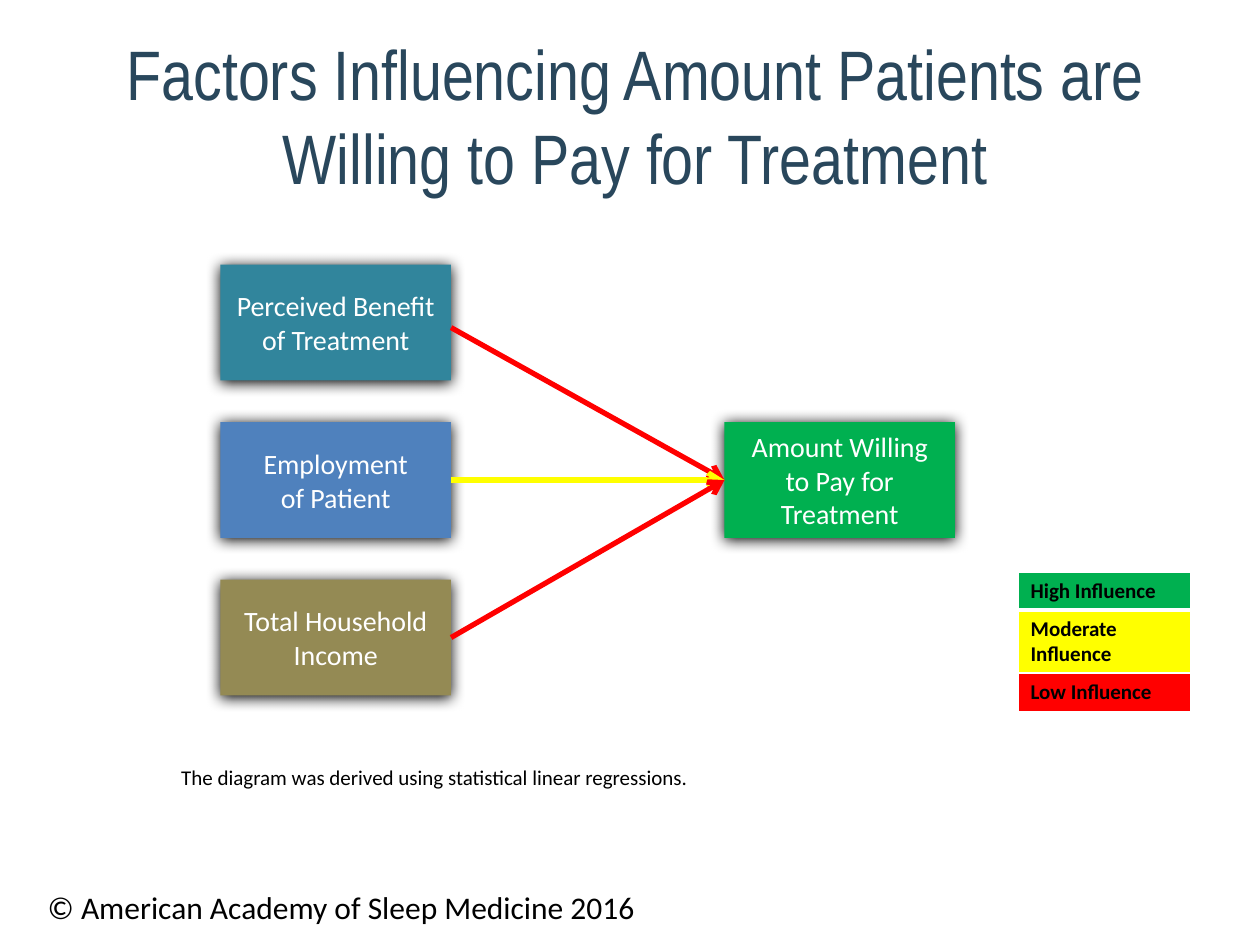
from lxml.etree import SubElement
from pptx import Presentation
from pptx.dml.color import RGBColor
from pptx.enum.shapes import MSO_CONNECTOR, MSO_SHAPE
from pptx.enum.text import MSO_ANCHOR, PP_ALIGN
from pptx.oxml.ns import qn
from pptx.util import Inches, Pt

HIGH, MODERATE, LOW = "00B050", "FFFF00", "FF0000"
BOX_W, BOX_H = 1.83, 0.92
FACTOR_X, OUTCOME_X = 1.75, 5.75
TOP, PITCH = 2.1, 1.25
FACTORS = [
    ("Perceived Benefit of Treatment", "31859C", LOW, 2.6),
    ("Employment\nof Patient", "4F81BD", MODERATE, 3.81),
    ("Total Household Income", "948A54", LOW, 5.06),
]
LEGEND = [
    ("High Influence", HIGH, 0.3),
    ("Moderate Influence", MODERATE, 0.49),
    ("Low Influence", LOW, 0.31),
]


def rgb(color):
    return RGBColor.from_string(color)


def write(tf, text, size, color="000000", align=PP_ALIGN.LEFT, name="Calibri", bold=False):
    tf.text = text
    for p in tf.paragraphs:
        p.alignment = align
        p.font.color.rgb = rgb(color)
        for key, value in {"size": Pt(size), "name": name, "bold": bold}.items():
            setattr(p.font, key, value)


def add_text(s, text, box, size, wrap=True, anchor=MSO_ANCHOR.TOP, **fmt):
    tf = s.shapes.add_textbox(*map(Inches, box)).text_frame
    tf.word_wrap = wrap
    tf.vertical_anchor = anchor
    write(tf, text, size, **fmt)


def add_shadow(sp):
    """Soft black shadow just below the shape."""
    effects = SubElement(sp._element.spPr, qn("a:effectLst"))
    shadow = SubElement(effects, qn("a:outerShdw"), blurRad=str(Pt(8.5)),
                        dist=str(Pt(1)), dir="5400000", algn="ctr", rotWithShape="0")
    SubElement(shadow, qn("a:srgbClr"), val="000000")


def add_box(s, text, x, y, color):
    sp = s.shapes.add_shape(MSO_SHAPE.RECTANGLE, *map(Inches, (x, y, BOX_W, BOX_H)))
    sp.fill.solid()
    sp.fill.fore_color.rgb = rgb(color)
    sp.line.fill.background()
    add_shadow(sp)
    sp.text_frame.word_wrap = True
    sp.text_frame.vertical_anchor = MSO_ANCHOR.MIDDLE
    write(sp.text_frame, text, 16, "FFFFFF", PP_ALIGN.CENTER)


def add_arrow(s, start, end, color):
    cx = s.shapes.add_connector(MSO_CONNECTOR.STRAIGHT, *map(Inches, start + end))
    cx.line.color.rgb = rgb(color)
    cx.line.width = Pt(3)
    SubElement(cx.line._get_or_add_ln(), qn("a:tailEnd"), type="arrow")
    SubElement(cx._element.spPr, qn("a:effectLst"))


def add_borders(cell, widths):
    tc_pr = cell._tc.get_or_add_tcPr()
    for side, width in widths.items():
        ln = SubElement(tc_pr, qn(f"a:ln{side}"), w=str(Pt(width)))
        SubElement(SubElement(ln, qn("a:solidFill")), qn("a:srgbClr"), val="FFFFFF")


def add_legend(s, x, y, width):
    height = sum(h for _, _, h in LEGEND)
    box = map(Inches, (x, y, width, height))
    table = s.shapes.add_table(len(LEGEND), 1, *box).table
    for i, (text, color, row_h) in enumerate(LEGEND):
        table.rows[i].height = Inches(row_h)
        cell = table.cell(i, 0)
        add_borders(cell, {"L": 1, "R": 1, "T": 3 if i == 1 else 1, "B": 3 if i == 0 else 1})
        cell.fill.solid()
        cell.fill.fore_color.rgb = rgb(color)
        write(cell.text_frame, text, 12, bold=True)


def main():
    prs = Presentation()
    prs.slide_width, prs.slide_height = Inches(10), Inches(7.5)
    s = prs.slides.add_slide(prs.slide_layouts[6])

    add_text(s, "Factors Influencing Amount Patients are Willing to Pay for Treatment",
             (0.25, 0.28, 9.58, 1.25), 40, anchor=MSO_ANCHOR.MIDDLE,
             color="29475C", align=PP_ALIGN.CENTER, name="Arial Narrow")

    for i, (text, color, _, _) in enumerate(FACTORS):
        add_box(s, text, FACTOR_X, TOP + i * PITCH, color)
    add_box(s, "Amount Willing to Pay for Treatment", OUTCOME_X, TOP + PITCH, HIGH)
    for _, _, influence, y in FACTORS:
        add_arrow(s, (FACTOR_X + BOX_W, y), (OUTCOME_X, 3.81), influence)

    add_text(s, "The diagram was derived using statistical linear regressions.",
             (1.34, 6.02, 8.43, 0.3), 12)
    add_legend(s, 8.08, 4.54, 1.37)
    add_text(s, "© American Academy of Sleep Medicine 2016",
             (0.28, 7, 4.92, 0.4), 18, wrap=False)
    prs.save("out.pptx")


if __name__ == "__main__":
    main()
